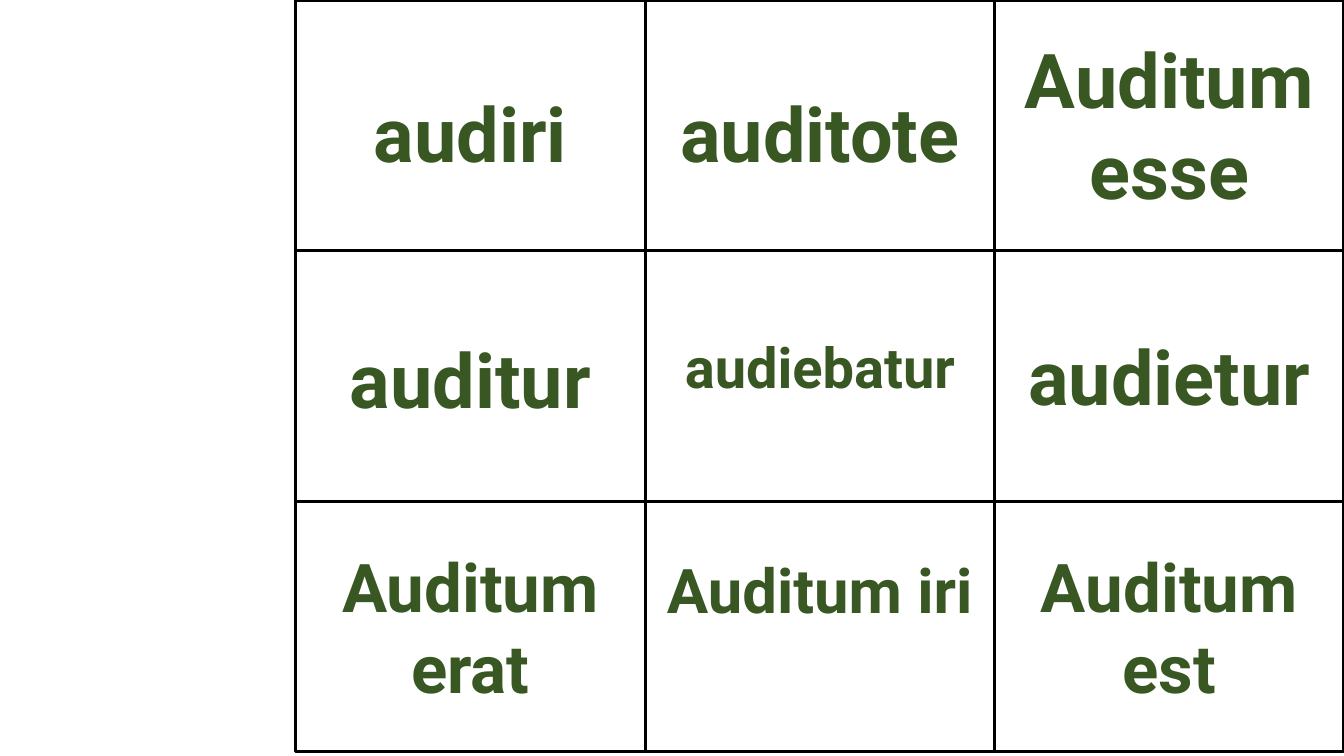
from lxml import etree
from pptx import Presentation
from pptx.dml.color import RGBColor
from pptx.enum import shapes, text
from pptx.oxml import ns
from pptx.util import Pt

BLACK = RGBColor(0x00, 0x00, 0x00)
GREEN = RGBColor(0x38, 0x57, 0x23)

GRID_LEFT = 211.2
CELL_WIDTH = 249.6
CELL_HEIGHT = 179

# Rows of (verb form, font size, top of its box, height of its box)
VERB_FORMS = [
    [("audiri", 54, 58.3, 72.7), ("auditote", 54, 58.3, 72.7), ("Auditum esse", 54, 20.2, 138.2)],
    [("auditur", 54, 234, 72.7), ("audiebatur", 40, 234, 55.4), ("audietur", 54, 231.8, 72.7)],
    [("Auditum erat", 48, 385.9, 123.8), ("Auditum iri", 44, 391, 113.8), ("Auditum est", 48, 385.9, 123.8)],
]


class VerbGrid:
    font_name = "Roboto"
    border_width = 2.25
    outline_width = 1.75

    def __init__(self, slide):
        self.slide = slide

    def cell(self, left, top):
        frame = self.slide.shapes.add_shape(
            shapes.MSO_SHAPE.RECTANGLE, Pt(left), Pt(top), Pt(CELL_WIDTH), Pt(CELL_HEIGHT))
        frame.shadow.inherit = False
        frame.fill.background()
        frame.line.color.rgb = BLACK
        frame.line.width = Pt(self.border_width)

    def verb(self, wording, size, left, top, height):
        box = self.slide.shapes.add_textbox(Pt(left), Pt(top), Pt(CELL_WIDTH), Pt(height))
        frame = box.text_frame
        frame.word_wrap = True
        frame.auto_size = text.MSO_AUTO_SIZE.SHAPE_TO_FIT_TEXT
        frame.text = wording
        paragraph = frame.paragraphs[0]
        paragraph.alignment = text.PP_ALIGN.CENTER
        run = paragraph.runs[0]
        run.font.name = self.font_name
        run.font.size = Pt(size)
        run.font.bold = True
        run.font.color.rgb = GREEN
        self.outline(run)

    def outline(self, run):
        """Draw the letters' edges in the text colour."""
        line = etree.Element(ns.qn("a:ln"), w=str(Pt(self.outline_width)))
        fill = etree.SubElement(line, ns.qn("a:solidFill"))
        etree.SubElement(fill, ns.qn("a:srgbClr"), val=str(GREEN))
        run.font._element.insert(0, line)


def main():
    deck = Presentation()
    deck.slide_width, deck.slide_height = Pt(960), Pt(540)
    blank_layout = deck.slide_layouts[6]
    grid = VerbGrid(deck.slides.add_slide(blank_layout))

    for row, forms in enumerate(VERB_FORMS):
        for column, (wording, size, top, height) in enumerate(forms):
            left = GRID_LEFT + column * CELL_WIDTH
            grid.cell(left, row * CELL_HEIGHT)
            grid.verb(wording, size, left, top, height)

    deck.save("out.pptx")


if __name__ == "__main__":
    main()
